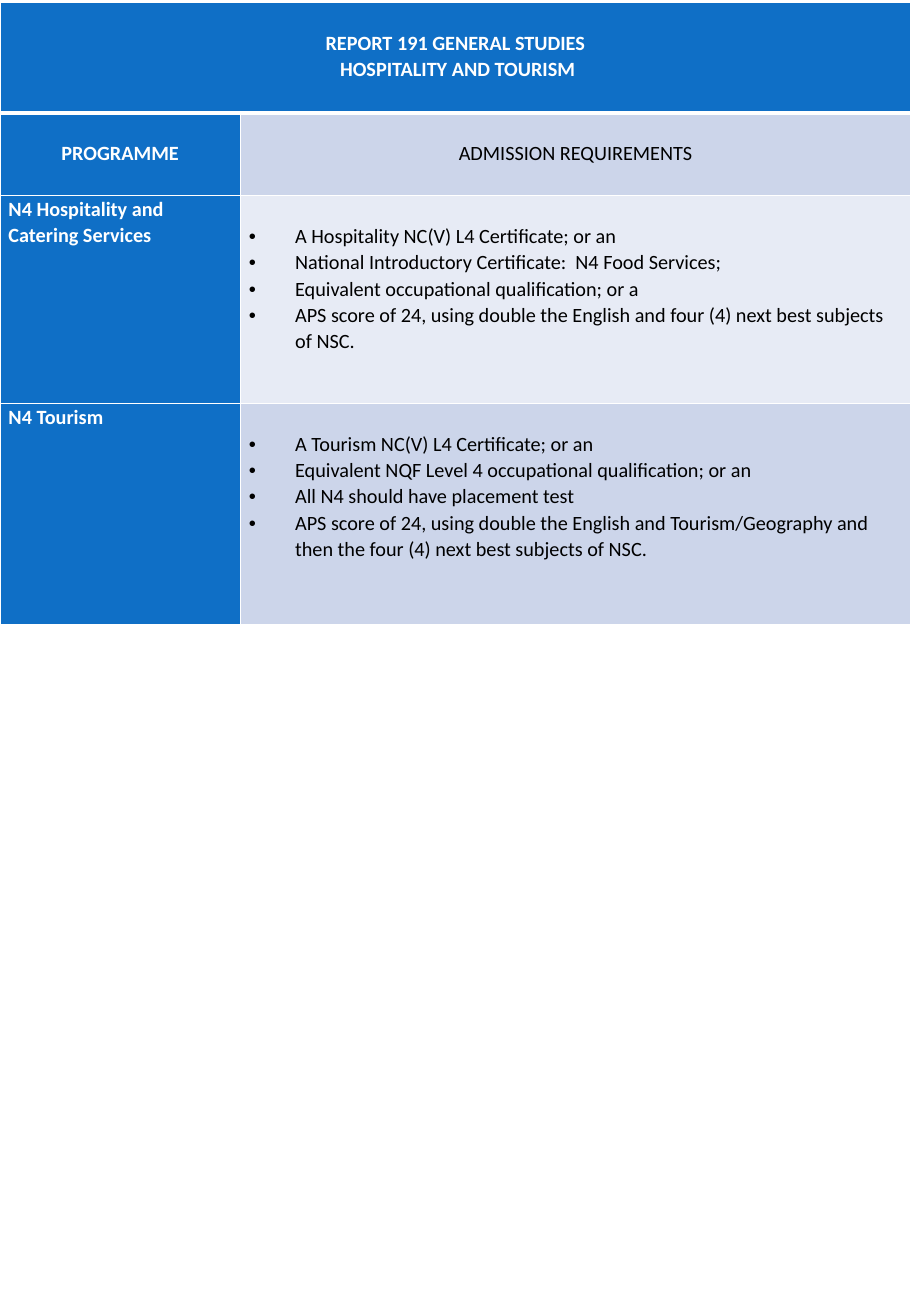
import pptx
import pptx.dml.color
import pptx.enum.text
import pptx.oxml
import pptx.oxml.ns
import pptx.util
from pptx.util import Inches

COLORS = {
    "blue": "0F6FC6",
    "band": "CCD5EA",
    "pale": "E7EBF5",
    "white": "FFFFFF",
    "black": "000000",
}
COLUMN_WIDTHS = [1.98, 5.52]
ROW_HEIGHTS = [0.91, 0.68, 1.71, 1.82]
LINE = 0.22
TITLE = ["REPORT 191 GENERAL STUDIES", " HOSPITALITY AND TOURISM"]
PROGRAMMES = [
    ("N4 Hospitality and Catering Services", "pale", [
        "A Hospitality NC(V) L4 Certificate; or an",
        "National Introductory Certificate:  N4 Food Services;",
        "Equivalent occupational qualification; or a",
        "APS score of 24, using double the English and four (4) next best subjects of NSC.",
    ]),
    ("N4 Tourism", "band", [
        "A Tourism NC(V) L4 Certificate; or an",
        "Equivalent NQF Level 4 occupational qualification; or an",
        "All N4 should have placement test",
        "APS score of 24, using double the English and Tourism/Geography "
        "and then the four (4) next best subjects of NSC.",
    ]),
]


def rgb(name):
    """Return the named colour."""
    return pptx.dml.color.RGBColor.from_string(COLORS[name])


def add_bullet(para):
    """Give a paragraph a bullet with a hanging indent."""
    properties = para._p.get_or_add_pPr()
    properties.set("marL", str(Inches(0.38)))
    properties.set("indent", str(-Inches(0.38)))
    namespace = pptx.oxml.ns.nsdecls("a")
    for tag in ('buFont typeface="Arial"', 'buChar char="•"'):
        properties.append(pptx.oxml.parse_xml(f"<a:{tag} {namespace}/>"))


def write_text(frame, lines, color="white", bold=True, centered=False, bullets=False):
    """Write one formatted paragraph for each line."""
    for index, line in enumerate(lines):
        para = frame.paragraphs[0] if index == 0 else frame.add_paragraph()
        para.line_spacing = 1.07
        alignment = pptx.enum.text.PP_ALIGN
        para.alignment = alignment.CENTER if centered else alignment.LEFT
        if bullets:
            add_bullet(para)
        span = para.add_run()
        span.text = line
        span.font.name = "Calibri"
        span.font.size = pptx.util.Pt(12)
        span.font.bold = bold
        span.font.color.rgb = rgb(color)


def add_borders(cell, top=1, bottom=1):
    """Draw white borders with the given top and bottom widths in points."""
    properties = cell._tc.get_or_add_tcPr()
    for side, width in (("L", 1), ("R", 1), ("T", top), ("B", bottom)):
        properties.append(pptx.oxml.parse_xml(
            f'<a:ln{side} {pptx.oxml.ns.nsdecls("a")} w="{pptx.util.Pt(width)}">'
            f'<a:solidFill><a:srgbClr val="{COLORS["white"]}"/></a:solidFill></a:ln{side}>'))


def fill_cell(cell, lines, fill, top_margin=LINE, **text_format):
    """Set the margins, fill and text of a cell."""
    cell.margin_left = cell.margin_right = Inches(0.07)
    cell.margin_top, cell.margin_bottom = Inches(top_margin), 0
    cell.fill.solid()
    cell.fill.fore_color.rgb = rgb(fill)
    write_text(cell.text_frame, lines, **text_format)


def add_grid(page):
    """Add the empty table with its sizes and borders."""
    table = page.shapes.add_table(
        len(ROW_HEIGHTS), len(COLUMN_WIDTHS), 0, Inches(0.02),
        Inches(sum(COLUMN_WIDTHS)), Inches(sum(ROW_HEIGHTS))).table
    for column, width in zip(table.columns, COLUMN_WIDTHS):
        column.width = Inches(width)
    for index, (row, height) in enumerate(zip(table.rows, ROW_HEIGHTS)):
        row.height = Inches(height)
        for cell in row.cells:
            add_borders(cell, top=3 if index == 1 else 1, bottom=3 if index == 0 else 1)
    table.cell(0, 0).merge(table.cell(0, 1))
    return table


def main():
    """Build the admission requirements slide."""
    deck = pptx.Presentation()
    deck.slide_width, deck.slide_height = Inches(7.5), Inches(10.83)
    page = deck.slides.add_slide(deck.slide_layouts[6])
    table = add_grid(page)
    fill_cell(table.cell(0, 0), TITLE, "blue", centered=True)
    fill_cell(table.cell(1, 0), ["PROGRAMME"], "blue", centered=True)
    fill_cell(table.cell(1, 1), ["ADMISSION REQUIREMENTS"], "band",
              color="black", bold=False, centered=True)
    for row, (programme, fill, requirements) in enumerate(PROGRAMMES, start=2):
        fill_cell(table.cell(row, 0), [programme], "blue", top_margin=0)
        fill_cell(table.cell(row, 1), requirements, fill,
                  color="black", bold=False, bullets=True)
    deck.save("out.pptx")


if __name__ == "__main__":
    main()
